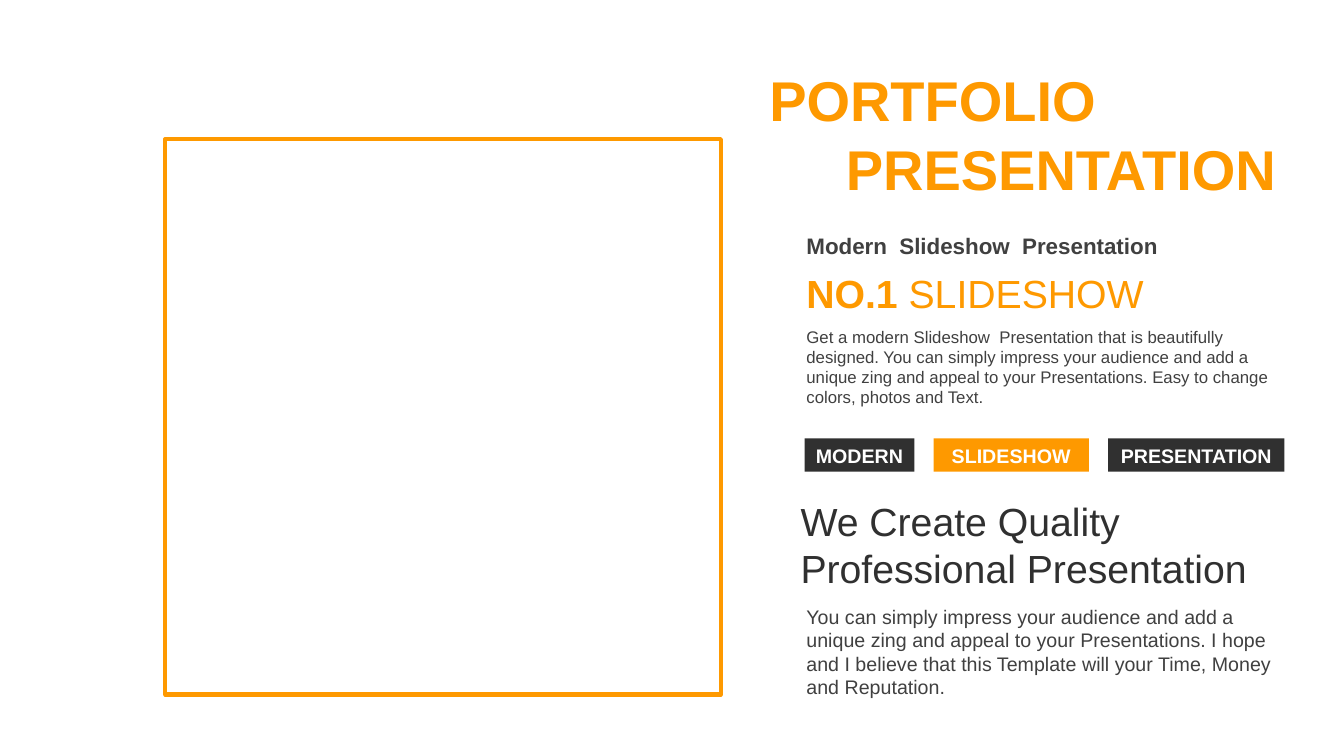
import pptx
import pptx.util
import pptx.dml.color
import pptx.enum.shapes
import pptx.enum.text

Inches = pptx.util.Inches
Pt = pptx.util.Pt
Anchor = pptx.enum.text.MSO_ANCHOR
Align = pptx.enum.text.PP_ALIGN
AutoSize = pptx.enum.text.MSO_AUTO_SIZE

ORANGE, DARK, GREY, WHITE = "FE9900", "303030", "404040", "FFFFFF"
FONT = "Arial"
COLUMN_LEFT, COLUMN_WIDTH = 7.9, 4.84
BODY_INSETS = (0.1, 0.05, 0.1, 0.05)
TITLE_INSETS = (0, 0.05, 0.1, 0.05)
HEADING_INSETS = (0.04, 0, 0.04, 0)
TAG_INSETS = (0.1, 0.1, 0.1, 0.05)

TITLE_WORDS = [
    ("PORTFOLIO", (7.63, 0.59, 4.81, 0.79)),
    ("PRESENTATION", (8.39, 1.27, 4.81, 0.79)),
]
PHOTO_FRAME = (1.64, 1.38, 5.51, 5.51)

COLUMN_TEXTS = [
    (2.25, 0.37, 16, GREY, Anchor.TOP, BODY_INSETS,
     [[("Modern  Slideshow  Presentation", True)]]),
    (2.62, 0.57, 28, ORANGE, Anchor.TOP, BODY_INSETS,
     [[("NO.1 ", True), ("SLIDESHOW", False)]]),
    (3.19, 0.91, 12, GREY, Anchor.TOP, BODY_INSETS,
     [[("Get a modern Slideshow  Presentation that is beautifully designed. "
        "You can simply impress your audience and add a unique zing and appeal "
        "to your Presentations. Easy to change colors, photos and Text.", False)]]),
    (4.93, 0.94, 28, DARK, Anchor.MIDDLE, HEADING_INSETS,
     [[("We Create Quality", False)], [("Professional Presentation", False)]]),
    (5.95, 1.04, 14, GREY, Anchor.TOP, BODY_INSETS,
     [[("You can simply impress your audience and add a unique zing and appeal "
        "to your Presentations. I hope and I believe that this Template will "
        "your Time, Money and Reputation.", False)]]),
]

TAGS = [("MODERN", 1.09, DARK), ("SLIDESHOW", 1.54, ORANGE), ("PRESENTATION", 1.75, DARK)]
TAG_LEFT, TAG_TOP, TAG_HEIGHT, TAG_GAP = 7.98, 4.35, 0.33, 0.19


def color(hex_value):
    return pptx.dml.color.RGBColor.from_string(hex_value)


def place(shape, box):
    shape.left, shape.top, shape.width, shape.height = map(Inches, box)


def write(shape, paragraphs, size, hex_value, anchor, insets, align=Align.LEFT):
    frame = shape.text_frame
    frame.word_wrap = True
    frame.vertical_anchor = anchor
    frame.margin_left, frame.margin_top, frame.margin_right, frame.margin_bottom = map(Inches, insets)
    for index, pieces in enumerate(paragraphs):
        paragraph = frame.paragraphs[0] if index == 0 else frame.add_paragraph()
        paragraph.alignment = align
        for text, bold in pieces:
            run = paragraph.add_run()
            run.text = text
            run.font.name = FONT
            run.font.size = Pt(size)
            run.font.bold = bold
            run.font.color.rgb = color(hex_value)


def add_rectangle(slide, box):
    shape = slide.shapes.add_shape(pptx.enum.shapes.MSO_SHAPE.RECTANGLE, *map(Inches, box))
    shape.shadow.inherit = False
    return shape


def main():
    presentation = pptx.Presentation()
    presentation.slide_width = Inches(13.33)
    presentation.slide_height = Inches(7.5)
    slide = presentation.slides.add_slide(presentation.slide_layouts[5])

    photo_frame = add_rectangle(slide, PHOTO_FRAME)
    photo_frame.fill.background()
    photo_frame.line.color.rgb = color(ORANGE)
    photo_frame.line.width = Pt(3)

    for top, height, size, hex_value, anchor, insets, paragraphs in COLUMN_TEXTS:
        box = (COLUMN_LEFT, top, COLUMN_WIDTH, height)
        shape = slide.shapes.add_textbox(*map(Inches, box))
        write(shape, paragraphs, size, hex_value, anchor, insets)
        shape.text_frame.auto_size = AutoSize.SHAPE_TO_FIT_TEXT

    left = TAG_LEFT
    for label, width, fill in TAGS:
        tag = add_rectangle(slide, (left, TAG_TOP, width, TAG_HEIGHT))
        tag.fill.solid()
        tag.fill.fore_color.rgb = color(fill)
        tag.line.fill.background()
        write(tag, [[(label, True)]], 14, WHITE, Anchor.MIDDLE, TAG_INSETS, Align.CENTER)
        paragraph = tag.text_frame.paragraphs[0]
        paragraph.line_spacing = 0.9
        paragraph.space_before = Pt(10)
        left += width + TAG_GAP

    title_shapes = [slide.shapes.title, slide.shapes.add_textbox(0, 0, 0, 0)]
    for shape, (word, box) in zip(title_shapes, TITLE_WORDS):
        place(shape, box)
        write(shape, [[(word, True)]], 40, ORANGE, Anchor.MIDDLE, TITLE_INSETS)
        shape.text_frame.auto_size = AutoSize.NONE

    presentation.save("out.pptx")


if __name__ == "__main__":
    main()
